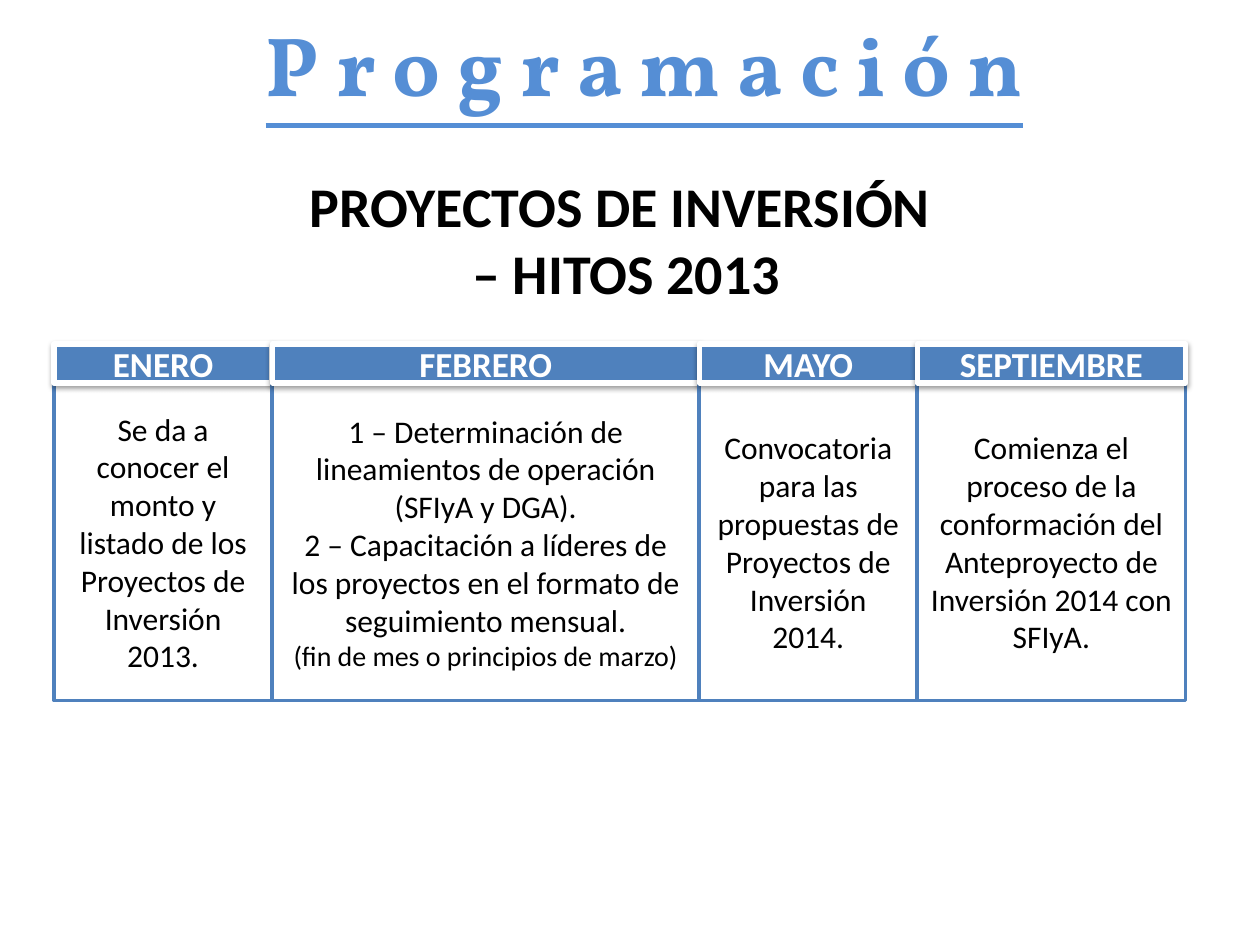
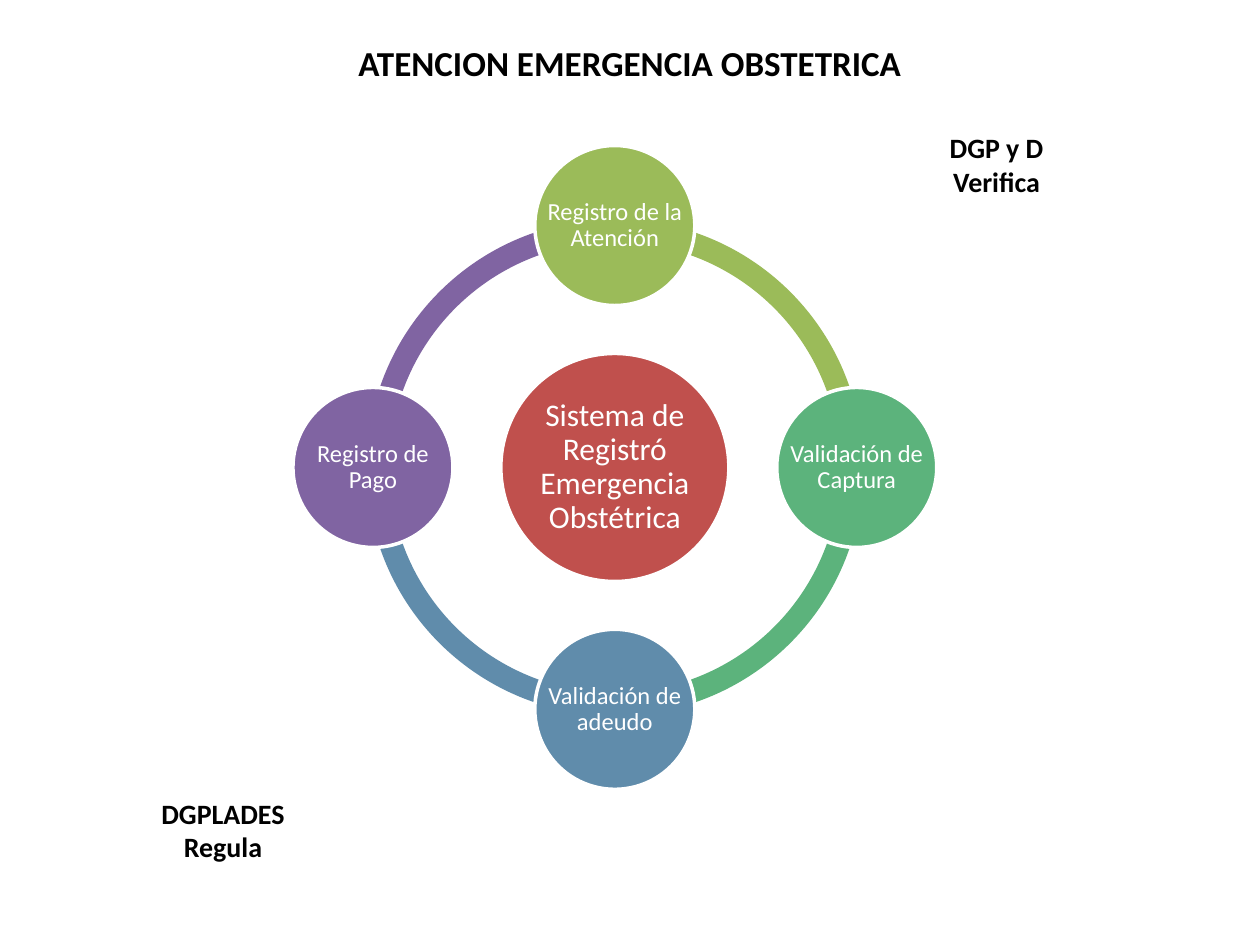
from itertools import accumulate
from lxml.etree import SubElement as Sub
from pptx import Presentation
from pptx.dml.color import RGBColor as RGB
from pptx.enum.shapes import MSO_SHAPE as Shape
from pptx.enum.text import MSO_ANCHOR as Anchor, MSO_AUTO_SIZE as Fit, PP_ALIGN as Align
from pptx.oxml.ns import qn
from pptx.util import Inches, Pt

HUE = {
    "black": "000000", "white": "FFFFFF", "blue": "4F81BD", "sky": "558ED5",
    "red": "C0504D", "lime": "9BBB59", "green": "5CB37C", "steel": "608CAB",
    "plum": "8064A2",
}

GOALS = [("PROYECTOS DE INVERSIÓN", 32), (" – HITOS 2013", 32)]
MONTHS = [
    ("ENERO", 1.73, [
        ("Se da a conocer el monto y listado de los Proyectos de Inversión 2013.", 18)]),
    ("FEBRERO", 3.39, [
        ("1 – Determinación de lineamientos de operación (SFIyA y DGA).", 18),
        ("2 – Capacitación a líderes de los proyectos en el formato de seguimiento mensual.", 18),
        ("(fin de mes o principios de marzo)", 16)]),
    ("MAYO", 1.73, [
        ("Convocatoria para las propuestas de Proyectos de Inversión 2014.", 18)]),
    ("SEPTIEMBRE", 2.13, [
        ("Comienza el proceso de la conformación del Anteproyecto de Inversión 2014 con SFIyA.", 18)]),
]
LEFT, TOP, HEAD, BODY = 0.43, 2.73, 0.31, 2.52

CORE = "Sistema de Registró Emergencia Obstétrica"
STEPS = [
    ("Registro de la Atención", "lime", 0, -1),
    ("Validación de Captura", "green", 1, 0),
    ("Validación de adeudo", "steel", 0, 1),
    ("Registro de Pago", "plum", -1, 0),
]
ROLES = [
    (6.73, 0.99, ["DGP y D", "Verifica"]),
    (0.59, 6.27, ["DGPLADES", "Regula"]),
]
MID_X, MID_Y, ORBIT = 4.88, 3.71, 1.92
RING, HUB, NODE = 3.94, 1.81, 1.27
QUARTER, FULL = 54, 216


def write(shape, lines, hue="black", bold=False, font="Calibri",
          anchor=Anchor.TOP, pad=None, space=None, under=None):
    frame = shape.text_frame
    frame.word_wrap = True
    frame.auto_size = Fit.NONE
    frame.vertical_anchor = anchor
    if pad is not None:
        frame.margin_left = frame.margin_right = Inches(pad)
        frame.margin_top = frame.margin_bottom = Inches(pad)
    for i, (text, size) in enumerate(lines):
        para = frame.add_paragraph() if i else frame.paragraphs[0]
        para.alignment = Align.CENTER
        para.line_spacing = space
        run = para.add_run()
        run.text = text
        run.font.name = font
        run.font.size = Pt(size)
        run.font.bold = bold
        run.font.underline = under
        run.font.color.rgb = RGB.from_string(HUE[hue])


def place(slide, kind, box, fill, edge=None, width=2):
    shape = slide.shapes.add_shape(kind, *map(Inches, box))
    shape.shadow.inherit = False
    shape.fill.solid()
    shape.fill.fore_color.rgb = RGB.from_string(HUE[fill])
    if edge:
        shape.line.color.rgb = RGB.from_string(HUE[edge])
        shape.line.width = Pt(width)
    else:
        shape.line.fill.background()
    return shape


def label(slide, box, lines, **style):
    write(slide.shapes.add_textbox(*map(Inches, box)), lines, **style)


def shade(shape):
    effects = shape._element.spPr.find(qn("a:effectLst"))
    cast = Sub(effects, qn("a:outerShdw"), blurRad=str(Pt(3.1)), dist=str(Pt(1.6)),
               dir="5400000", rotWithShape="0")
    tint = Sub(cast, qn("a:srgbClr"), val=HUE["black"])
    Sub(tint, qn("a:alpha"), val="38000")


def start(deck, box, text, size, **style):
    slide = deck.slides.add_slide(deck.slide_layouts[5])
    title = slide.shapes.title
    title.left, title.top, title.width, title.height = map(Inches, box)
    write(title, [(text, size)], bold=True, **style)
    return slide


def disc(slide, x, y, size, hue, text, points, pad):
    box = (x - size / 2, y - size / 2, size, size)
    place(slide, Shape.OVAL, box, hue, "white")
    label(slide, box, [(text, points)], hue="white", anchor=Anchor.MIDDLE,
          pad=pad, space=0.9)


def plan(deck):
    slide = start(deck, (1.77, 0.05, 6.69, 0.68), "P r o g r a m a c i ó n", 48,
                  hue="sky", font="Vollkorn", under=True)
    label(slide, (1.69, 1.31, 6.46, 1.18), GOALS, bold=True)
    edges = accumulate((wide for _, wide, _ in MONTHS), initial=LEFT)
    for x, (month, wide, tasks) in zip(edges, MONTHS):
        body = place(slide, Shape.RECTANGLE, (x, TOP + HEAD, wide, BODY), "white", "blue")
        write(body, tasks, anchor=Anchor.MIDDLE)
        head = place(slide, Shape.RECTANGLE, (x, TOP, wide, HEAD), "blue", "white", 3)
        shade(head)
        write(head, [(month, 20)], hue="white", bold=True, anchor=Anchor.MIDDLE)


def cycle(deck):
    slide = start(deck, (1.77, 0.28, 6.46, 0.71), "ATENCION EMERGENCIA OBSTETRICA", 20)
    ring = (MID_X - RING / 2, MID_Y - RING / 2, RING, RING)
    for i, (_, hue, _, _) in enumerate(STEPS):
        arc = place(slide, Shape.BLOCK_ARC, ring, hue)
        turn = (i + 3) * QUARTER
        for j, value in enumerate((turn % FULL, (turn + QUARTER) % FULL, 0.046)):
            arc.adjustments[j] = value
    disc(slide, MID_X, MID_Y, HUB, "red", CORE, 18, 0.03)
    for text, hue, dx, dy in STEPS:
        disc(slide, MID_X + dx * ORBIT, MID_Y + dy * ORBIT, NODE, hue, text, 14, 0.02)
    for x, y, lines in ROLES:
        label(slide, (x, y, 2.36, 0.64), [(line, 16) for line in lines], bold=True)


def main():
    deck = Presentation()
    deck.slide_width, deck.slide_height = Inches(10), Inches(7.5)
    plan(deck)
    cycle(deck)
    deck.save("out.pptx")


if __name__ == "__main__":
    main()
